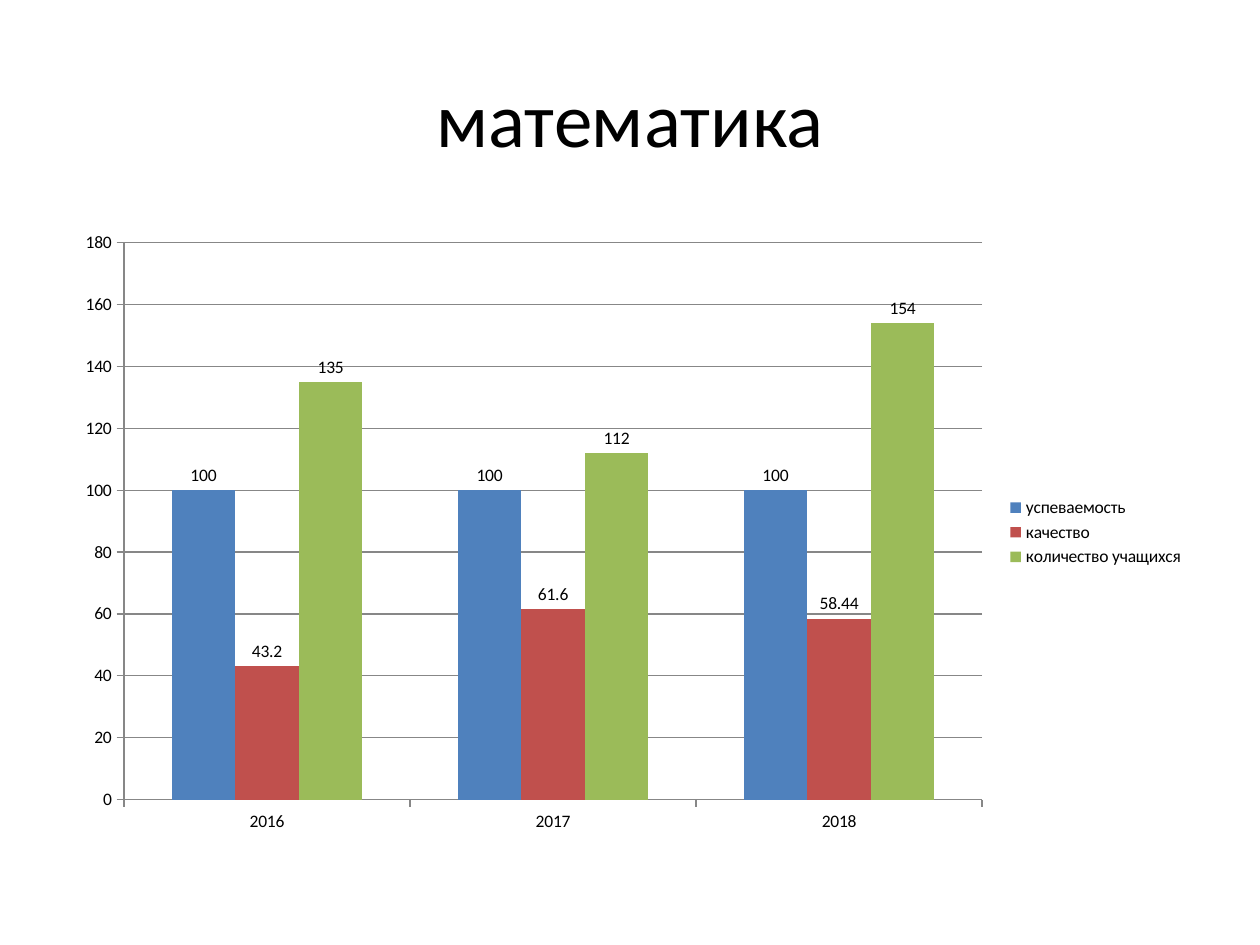
from dataclasses import dataclass

from pptx import Presentation
from pptx import util as u
from pptx.chart.data import CategoryChartData
from pptx.dml.color import RGBColor
from pptx.enum import chart as ch, text


@dataclass(frozen=True)
class Theme:
    font: str = "Calibri"
    ink: str = "000000"
    paper: str = "FFFFFF"
    line: str = "878787"
    bars: tuple = ("4F81BD", "C0504D", "9BBB59")
    title_size: int = 44
    chart_size: int = 10


YEARS = ["2016", "2017", "2018"]
RESULTS = {
    "успеваемость": (100, 100, 100),
    "качество": (43.2, 61.6, 58.44),
    "количество учащихся": (135, 112, 154),
}


def apply(target, formats):
    for name, value in formats.items():
        setattr(target, name, value)


class Deck:
    """Holds the theme and the current slide; boxes are shares of its size."""

    def __init__(self, theme, width=10, height=7.5):
        self.theme = theme
        self.prs = Presentation()
        self.prs.slide_width = u.Inches(width)
        self.prs.slide_height = u.Inches(height)
        self.s = self.prs.slides.add_slide(self.prs.slide_layouts[5])
        fill = self.s.background.fill
        fill.solid()
        fill.fore_color.rgb = RGBColor.from_string(theme.paper)

    def box(self, *shares):
        w, h = self.prs.slide_width, self.prs.slide_height
        return [round(share * size) for share, size in zip(shares, (w, h, w, h))]

    def style_font(self, font, size):
        apply(font, {"name": self.theme.font, "size": u.Pt(size), "bold": False})
        font.color.rgb = RGBColor.from_string(self.theme.ink)

    def style_line(self, line):
        line.color.rgb = RGBColor.from_string(self.theme.line)
        line.width = u.Pt(0.75)

    def title(self, words, *shares):
        sp = self.s.shapes.title
        apply(sp, dict(zip(("left", "top", "width", "height"), self.box(*shares))))
        tf = sp.text_frame
        apply(tf, {"text": words, "vertical_anchor": text.MSO_ANCHOR.MIDDLE})
        p = tf.paragraphs[0]
        p.alignment = text.PP_ALIGN.CENTER
        self.style_font(p.runs[0].font, self.theme.title_size)

    def columns(self, categories, series, *shares):
        data = CategoryChartData()
        data.categories = categories
        for name, values in series.items():
            data.add_series(name, values)
        chart = self.s.shapes.add_chart(
            ch.XL_CHART_TYPE.COLUMN_CLUSTERED, *self.box(*shares), data).chart
        apply(chart, {"has_title": False, "has_legend": True})
        self.style_font(chart.font, self.theme.chart_size)
        apply(chart.legend, {"position": ch.XL_LEGEND_POSITION.RIGHT,
                             "include_in_layout": False})

        # Axes and gridlines
        for axis in (chart.category_axis, chart.value_axis):
            apply(axis, {"major_tick_mark": ch.XL_TICK_MARK.OUTSIDE,
                         "minor_tick_mark": ch.XL_TICK_MARK.NONE})
            self.style_line(axis.format.line)
        chart.value_axis.has_major_gridlines = True
        self.style_line(chart.value_axis.major_gridlines.format.line)

        # Bars and their values
        plot = chart.plots[0]
        apply(plot, {"gap_width": 150, "overlap": 0, "vary_by_categories": False})
        for bars, color in zip(plot.series, self.theme.bars):
            fill = bars.format.fill
            fill.solid()
            fill.fore_color.rgb = RGBColor.from_string(color)
            labels = bars.data_labels
            apply(labels, {"show_value": True,
                           "position": ch.XL_LABEL_POSITION.OUTSIDE_END})
            self.style_font(labels.font, self.theme.chart_size)


def main():
    deck = Deck(Theme())
    deck.title("математика", 0.05, 0.04, 0.9, 1 / 6)
    deck.columns(YEARS, RESULTS, 0.05, 7 / 30, 0.9, 0.66)
    deck.prs.save("out.pptx")


if __name__ == "__main__":
    main()
